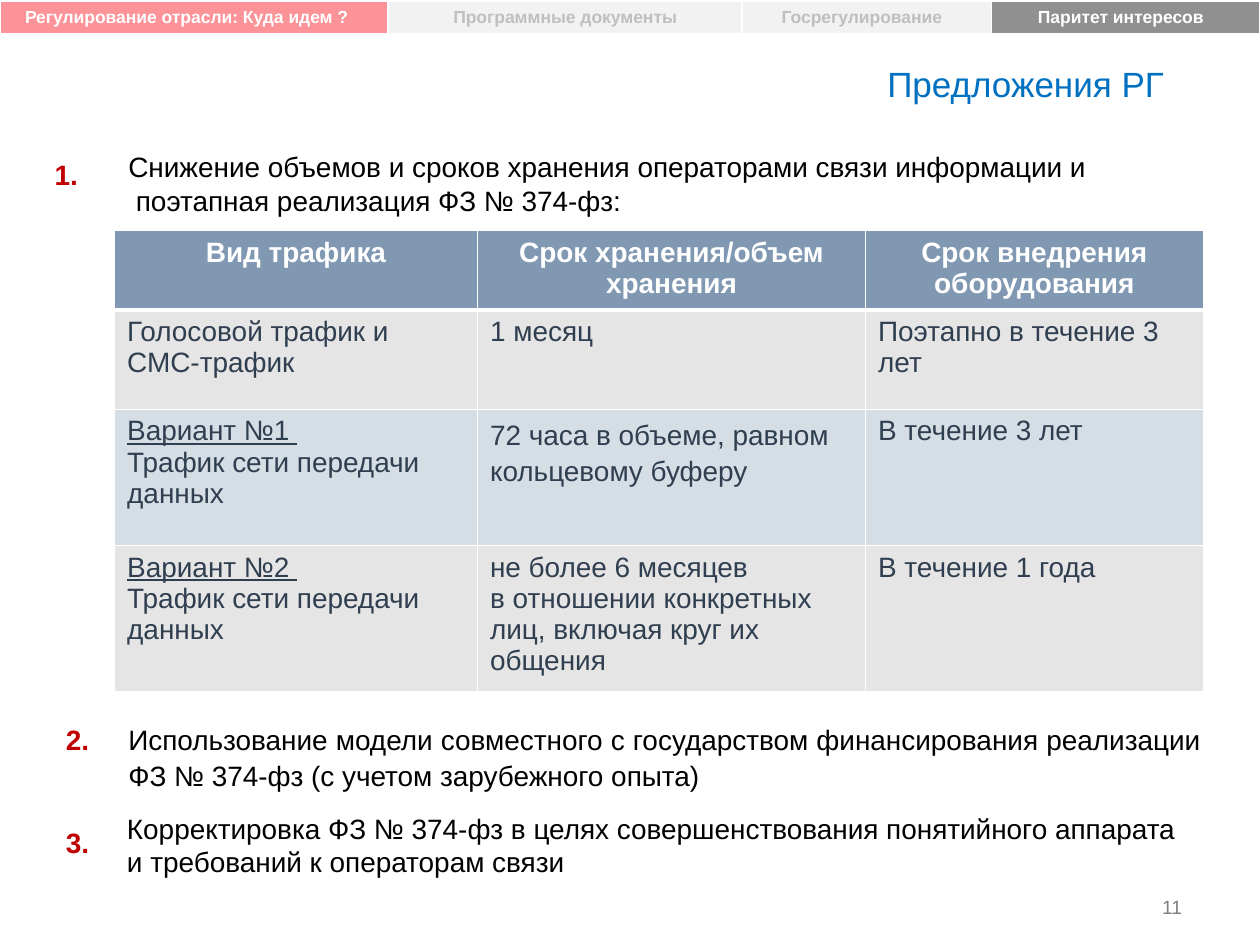
from lxml import etree
from pptx import Presentation
from pptx.dml.color import RGBColor
from pptx.enum.text import MSO_ANCHOR, MSO_AUTO_SIZE, PP_ALIGN
from pptx.oxml.ns import qn
from pptx.util import Inches, Pt

LEFT, CENTER, RIGHT, JUSTIFY = PP_ALIGN.LEFT, PP_ALIGN.CENTER, PP_ALIGN.RIGHT, PP_ALIGN.JUSTIFY
TOP, MIDDLE = MSO_ANCHOR.TOP, MSO_ANCHOR.MIDDLE

THEME = {
    "font": "Arial",
    "title": 20, "body": 16, "nav": 10, "page": 11,
    "blue": "0070C0", "black": "000000", "white": "FFFFFF", "red": "C00000",
    "gray": "7F7F7F", "dim": "BFBFBF", "ink": "303F50",
    "nav_pink": "FC9398", "nav_light": "F2F2F2", "nav_dark": "909090",
    "head": "8098B2", "row_gray": "E5E5E5", "row_blue": "D5DDE5",
}


def write(tf, text, size, color, bold=False, align=LEFT, spacing=None):
    """Set the text of a frame and format all its runs."""
    tf.text = text
    tf.word_wrap = True
    for p in tf.paragraphs:
        p.alignment = align
        if spacing:
            p.line_spacing = spacing
        for r in p.runs:
            r.font.name = THEME["font"]
            r.font.size = Pt(THEME[size])
            r.font.bold = bold
            r.font.color.rgb = RGBColor.from_string(THEME[color])


def paint(cell, fill, bottom=1):
    """Fill a cell and give it white borders."""
    cell.fill.solid()
    cell.fill.fore_color.rgb = RGBColor.from_string(THEME[fill])
    tcPr = cell._tc.get_or_add_tcPr()
    for i, (side, width) in enumerate((("L", 1), ("R", 1), ("T", 1), ("B", bottom))):
        ln = etree.Element(qn(f"a:ln{side}"), w=str(Pt(width)))
        solid = etree.SubElement(ln, qn("a:solidFill"))
        etree.SubElement(solid, qn("a:srgbClr"), val=THEME["white"])
        tcPr.insert(i, ln)


prs = Presentation()
prs.slide_width, prs.slide_height = Inches(10), Inches(7.5)
s = prs.slides.add_slide(prs.slide_layouts[5])

# Title
title = s.shapes.title
title.left, title.top, title.width, title.height = [Inches(v) for v in (3.11, 0.44, 6.38, 0.44)]
tf = title.text_frame
write(tf, "Предложения РГ", "title", "blue", align=RIGHT)
tf.auto_size = MSO_AUTO_SIZE.NONE
tf.vertical_anchor = MIDDLE
tf.margin_right = Inches(0.25)

# Navigation strip: text, width, fill, text colour, right margin
nav = [
    ("Регулирование отрасли: Куда идем ?", 3.08, "nav_pink", "white", 0.22),
    ("Программные документы", 2.81, "nav_light", "dim", 0.1),
    ("Госрегулирование", 1.98, "nav_light", "dim", 0.18),
    ("Паритет интересов", 2.13, "nav_dark", "white", 0.18),
]
table = s.shapes.add_table(1, len(nav), 0, Inches(0.01), Inches(10), Inches(0.27)).table
for c, (text, width, fill, color, margin) in enumerate(nav):
    table.columns[c].width = Inches(width)
    cell = table.cell(0, c)
    write(cell.text_frame, text, "nav", color, True, CENTER)
    cell.margin_right = Inches(margin)
    paint(cell, fill, 3)

# Traffic table
rows = [
    ("Вид трафика", "Срок хранения/объем хранения", "Срок внедрения оборудования"),
    ("Голосовой трафик и СМС-трафик", "1 месяц", "Поэтапно в течение 3 лет"),
    ("Вариант №1 \nТрафик сети передачи данных",
     "72 часа в объеме, равном кольцевому буферу", "В течение 3 лет"),
    ("Вариант №2 \nТрафик сети передачи данных",
     "не более 6 месяцев\nв отношении конкретных лиц, включая круг их общения",
     "В течение 1 года"),
]
table = s.shapes.add_table(4, 3, Inches(0.91), Inches(1.83), Inches(8.64), Inches(3.66)).table
for c, width in enumerate((2.88, 3.08, 2.68)):
    table.columns[c].width = Inches(width)
for i, height in enumerate((0.63, 0.79, 1.08, 1.16)):
    table.rows[i].height = Inches(height)
    for c, text in enumerate(rows[i]):
        cell = table.cell(i, c)
        if i == 0:
            write(cell.text_frame, text, "body", "white", True, CENTER)
            paint(cell, "head", 3)
        else:
            write(cell.text_frame, text, "body", "ink")
            paint(cell, "row_gray" if i % 2 else "row_blue")
for i in (2, 3):
    table.cell(i, 0).text_frame.paragraphs[0].runs[0].font.underline = True
table.cell(2, 1).text_frame.paragraphs[0].line_spacing = 1.15

# Proposals, their numbers and the page number:
# text, place, size, colour, bold, alignment, spacing, anchor
boxes = [
    ("Снижение объемов и сроков хранения операторами связи информации и\n"
     "поэтапная реализация ФЗ № 374-фз:",
     (0.92, 1.14, 9.08, 0.64), "body", "black", False, LEFT, None, TOP),
    ("Использование модели совместного с государством финансирования "
     "реализации ФЗ № 374-фз (с учетом зарубежного опыта)",
     (0.92, 5.67, 8.71, 0.68), "body", "black", False, JUSTIFY, 1.07, TOP),
    ("Корректировка ФЗ № 374-фз в целях совершенствования понятийного "
     "аппарата и требований к операторам связи",
     (0.91, 6.39, 8.6, 0.64), "body", "black", False, LEFT, None, TOP),
    ("1.", (0.33, 1.19, 0.39, 0.39), "body", "red", True, CENTER, None, MIDDLE),
    ("2.", (0.42, 5.67, 0.39, 0.39), "body", "red", True, CENTER, None, MIDDLE),
    ("3.", (0.42, 6.49, 0.39, 0.39), "body", "red", True, CENTER, None, MIDDLE),
    ("11", (8.46, 7.06, 1.02, 0.29), "page", "gray", False, RIGHT, None, TOP),
]
for text, place, size, color, bold, align, spacing, anchor in boxes:
    tf = s.shapes.add_textbox(*[Inches(v) for v in place]).text_frame
    write(tf, text, size, color, bold, align, spacing)
    tf.vertical_anchor = anchor
    if bold:
        tf.margin_left = tf.margin_right = 0
    # A second paragraph is set in slightly
    for p in tf.paragraphs[1:]:
        p._p.get_or_add_pPr().set("marL", str(Inches(0.06)))

prs.save("out.pptx")
